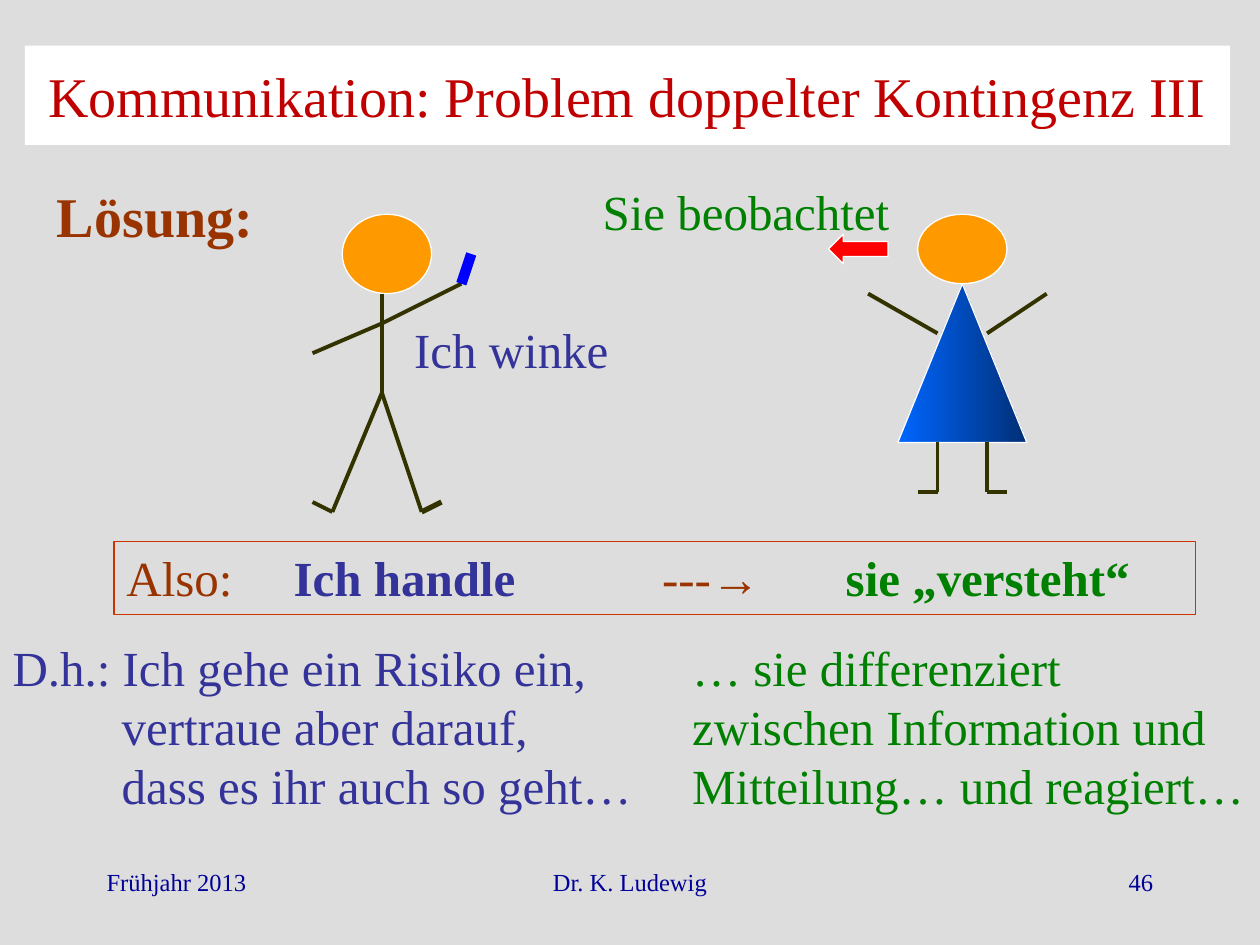
from pptx import Presentation
from pptx import util as u
from pptx.dml.color import RGBColor
from pptx.enum import shapes, text
from pptx.oxml.ns import qn
from lxml import etree

FONT = "Times New Roman"
COLOURS = {
    "page": "DDDDDD", "white": "FFFFFF", "title": "C00000", "brown": "993300",
    "me": "333399", "her": "008000", "footer": "000099", "frame": "CC3300",
    "limb": "333300", "head": "FF9900", "arrow": "FF0000", "hand": "0000FF",
    "dress": "0066FF", "dress_dark": "002F76",
}


def colour(name):
    """Return the named palette colour."""
    return RGBColor.from_string(COLOURS[name])


def place(item, box):
    """Move an object to a box given in centimetres."""
    item.left, item.top, item.width, item.height = map(u.Cm, box)


def style(span, size, name, bold=False):
    """Format one run."""
    span.font.name, span.font.size, span.font.bold = FONT, u.Pt(size), bold
    span.font.color.rgb = colour(name)


def write(item, box, lines, size, name, bold=False,
          align=text.PP_ALIGN.LEFT, anchor=text.MSO_ANCHOR.TOP):
    """Place a text object and fill it with formatted lines."""
    place(item, box)
    frame = item.text_frame
    frame.text = "\n".join(lines)
    frame.word_wrap = True
    frame.auto_size = text.MSO_AUTO_SIZE.NONE
    frame.vertical_anchor = anchor
    for para in frame.paragraphs:
        para.alignment = align
        para.space_before = u.Pt(0)
        for span in para.runs:
            style(span, size, name, bold)


def add_label(page, box, line, size, name, **options):
    """Add a one-line text box."""
    label = page.shapes.add_textbox(0, 0, 0, 0)
    write(label, box, [line], size, name, **options)


def add_form(parent, kind, box, fill=None, line="white"):
    """Add a preset shape with a thin outline."""
    form = parent.shapes.add_shape(kind, *map(u.Cm, box))
    form.shadow.inherit = False
    if fill:
        form.fill.solid()
        form.fill.fore_color.rgb = colour(fill)
    else:
        form.fill.background()
    form.line.color.rgb = colour(line)
    form.line.width = u.Pt(0.75)
    return form


def add_strokes(parent, box, strokes, name="limb", width=2.25):
    """Draw straight lines relative to the corner of a box."""
    left, top = box[:2]
    for x1, y1, x2, y2 in strokes:
        stroke = parent.shapes.add_connector(
            shapes.MSO_CONNECTOR.STRAIGHT, u.Cm(left + x1), u.Cm(top + y1),
            u.Cm(left + x2), u.Cm(top + y2))
        stroke.line.color.rgb = colour(name)
        stroke.line.width = u.Pt(width)
        etree.SubElement(stroke._element.spPr, qn("a:effectLst"))


def add_waver(page, box):
    """Draw the waving figure and the thing in its hand."""
    left, top = box
    figure = page.shapes.add_group_shape()
    add_form(figure, shapes.MSO_SHAPE.OVAL, (left + 0.6, top, 1.8, 1.6), "head")
    add_strokes(figure, box, [
        (1.4, 1.6, 1.4, 3.6), (1.4, 2.2, 0, 2.8), (1.4, 2.2, 3, 1.4),
        (1.4, 3.6, 0.4, 6), (0.4, 6, 0, 5.8), (1.4, 3.6, 2.2, 6)])
    add_strokes(figure, box, [(2.2, 6, 2.6, 5.8)], width=3)
    add_strokes(page, box, [(3, 1.4, 3.2, 0.8)], "hand", 6)


def add_observer(page, box):
    """Draw the observing figure and the arrow of her gaze."""
    left, top = box
    figure = page.shapes.add_group_shape()
    dress = add_form(figure, shapes.MSO_SHAPE.ISOSCELES_TRIANGLE,
                     (left + 0.6, top + 1.4, 2.6, 3.2))
    dress.fill.gradient()
    dress.fill.gradient_angle = 0
    for stop, name in zip(dress.fill.gradient_stops, ("dress", "dress_dark")):
        stop.color.rgb = colour(name)
    add_strokes(figure, box, [
        (1.4, 2.4, 0, 1.6), (2.4, 2.4, 3.6, 1.6), (1.4, 4.6, 1.4, 5.6),
        (1, 5.6, 1.4, 5.6), (2.4, 4.6, 2.4, 5.6), (2.4, 5.6, 2.8, 5.6)])
    add_form(figure, shapes.MSO_SHAPE.OVAL, (left + 1, top, 1.8, 1.4), "head")
    add_form(page, shapes.MSO_SHAPE.LEFT_ARROW,
             (left - 0.8, top + 0.4, 1.2, 0.6), "arrow")


def add_summary(page, box):
    """Add the framed line, its parts set at tab stops."""
    frame = add_form(page, shapes.MSO_SHAPE.RECTANGLE, box, line="frame")
    frame.text_frame.vertical_anchor = text.MSO_ANCHOR.TOP
    para = frame.text_frame.paragraphs[0]
    para.alignment = text.PP_ALIGN.LEFT
    for words, name, bold in (("Also:", "brown", False),
                              ("\tIch handle", "me", True),
                              ("\t---→", "brown", False),
                              ("\tsie „versteht“", "her", True)):
        span = para.add_run()
        span.text = words
        style(span, 28, name, bold)
    stops = etree.SubElement(para._p.get_or_add_pPr(), qn("a:tabLst"))
    for position in (3.37, 10.8, 14.5):
        etree.SubElement(stops, qn("a:tab"), pos=str(u.Cm(position)), algn="l")


def add_conclusion(body, box, lines, name, indent=0):
    """Fill a body placeholder without bullets, later lines indented."""
    write(body, box, lines, 28, name)
    for number, para in enumerate(body.text_frame.paragraphs):
        properties = para._p.get_or_add_pPr()
        properties.set("marL", str(u.Cm(indent if number else 0)))
        properties.set("indent", "0")
        etree.SubElement(properties, qn("a:buNone"))


def add_title(title, box):
    """Fill the title placeholder on its white band."""
    write(title, box, ["Kommunikation: Problem doppelter Kontingenz III"], 32,
          "title", align=text.PP_ALIGN.CENTER, anchor=text.MSO_ANCHOR.MIDDLE)
    title.fill.solid()
    title.fill.fore_color.rgb = colour("white")


def add_footer(page, box):
    """Add date, author and page number across a box."""
    left, top, width, height = box
    side, middle = 5.3, 8.04
    for x, wide, line, align in (
            (left, side, "Frühjahr 2013", text.PP_ALIGN.LEFT),
            (left + (width - middle) / 2, middle, "Dr. K. Ludewig",
             text.PP_ALIGN.CENTER),
            (left + width - side, side, "46", text.PP_ALIGN.RIGHT)):
        add_label(page, (x, top, wide, height), line, 14, "footer", align=align)


def main():
    """Build the slide and save it."""
    deck = Presentation()
    deck.slide_width, deck.slide_height = u.Cm(25.4), u.Cm(19.05)
    page = deck.slides.add_slide(deck.slide_layouts[3])
    page.background.fill.solid()
    page.background.fill.fore_color.rgb = colour("page")
    title, mine, hers = list(page.placeholders)[:3]

    add_title(title, (0.5, 0.92, 24.3, 2))
    add_label(page, (0.9, 3.53, 4.6, 1.6), "Lösung:", 32, "brown", bold=True)
    add_label(page, (8.1, 6.32, 4.8, 1.45), "Ich winke", 28, "me")
    add_waver(page, (6.3, 4.32))
    add_observer(page, (17.5, 4.32))
    add_label(page, (11.9, 3.53, 6.4, 1.45), "Sie beobachtet", 28, "her")
    add_summary(page, (2.3, 10.92, 21.8, 1.47))
    add_conclusion(mine, (0, 12.73, 13.2, 3.8),
                   ["D.h.: Ich gehe ein Risiko ein,", "vertraue aber darauf,",
                    "dass es ihr auch so geht…"], "me", indent=2.2)
    add_conclusion(hers, (13.7, 12.73, 11.7, 3.8),
                   ["… sie differenziert",
                    "zwischen Information und Mitteilung… und reagiert…"], "her")
    add_footer(page, (1.9, 17.35, 21.6, 1.27))
    deck.save("out.pptx")


if __name__ == "__main__":
    main()
